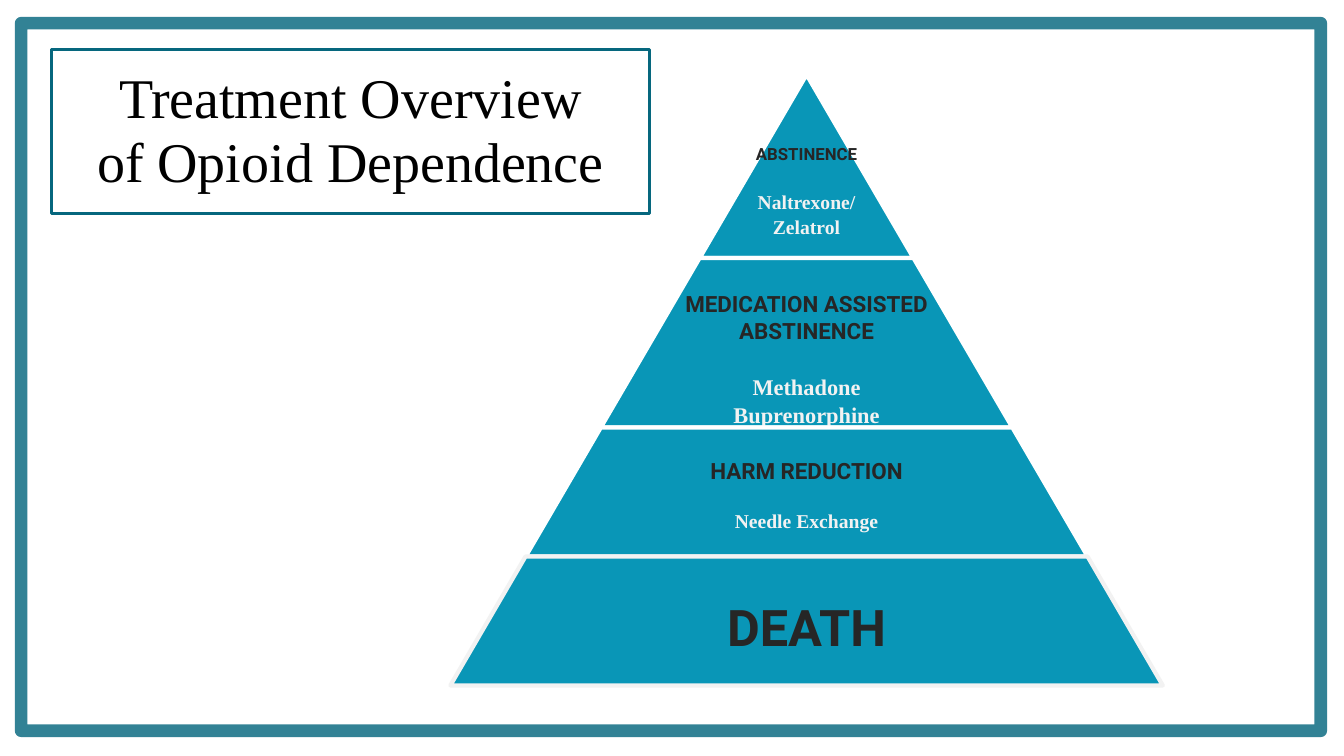
"""Build the opioid dependence treatment pyramid slide."""
from copy import deepcopy
from dataclasses import dataclass

from lxml.etree import SubElement
from pptx import Presentation
from pptx.dml.color import RGBColor
from pptx.enum.shapes import MSO_SHAPE
from pptx.enum.text import MSO_ANCHOR, MSO_AUTO_SIZE, PP_ALIGN
from pptx.oxml.ns import qn
from pptx.util import Inches, Pt

BLACK = RGBColor(0x00, 0x00, 0x00)
WHITE = RGBColor(0xFF, 0xFF, 0xFF)
PALE = RGBColor(0xF2, 0xF2, 0xF2)
DARK = RGBColor(0x26, 0x26, 0x26)
TEAL = RGBColor(0x06, 0x67, 0x7E)
BLUE = RGBColor(0x09, 0x96, 0xB7)

HEADING = {"name": "Roboto", "bold": True}
DETAIL = {"name": "Times New Roman", "bold": True}
CENTER_X, APEX_Y, SLOPE = 8.0, 0.74, 0.583


@dataclass
class Line:
    text: str
    size: float
    style: dict
    color: RGBColor
    before: float = 0


@dataclass
class Level:
    height: float
    text_share: float
    text_inset: float
    edge: RGBColor
    lines: list[Line]


LEVELS = [
    Level(1.82, 1, 0.69, WHITE, [
        Line("ABSTINENCE", 12, HEADING, DARK),
        Line("Naltrexone/", 14, DETAIL, PALE, 18.5),
        Line("Zelatrol", 14, DETAIL, PALE, 1)]),
    Level(1.68, 0.65, 0.32, WHITE, [
        Line("MEDICATION ASSISTED\nABSTINENCE", 16, HEADING, DARK),
        Line("Methadone", 16, DETAIL, PALE, 20.5),
        Line("Buprenorphine", 16, DETAIL, PALE, 1)]),
    Level(1.28, 0.65, 0.29, WHITE, [
        Line("HARM REDUCTION", 16, HEADING, DARK),
        Line("Needle Exchange", 14, DETAIL, PALE, 18)]),
    Level(1.28, 0.65, 0.39, PALE, [Line("DEATH", 36, HEADING, DARK)]),
]


def write_line(p, line: Line) -> None:
    p.text = line.text
    p.alignment = PP_ALIGN.CENTER
    if line.before:
        p.space_before = Pt(line.before)
    for r in p.runs:
        for key, value in {**line.style, "size": Pt(line.size)}.items():
            setattr(r.font, key, value)
        r.font.color.rgb = line.color
    for br in p._p.findall(qn("a:br")):
        br.append(deepcopy(p.runs[0]._r.rPr))


def outline(sp, color: RGBColor, width: float) -> None:
    sp.line.color.rgb = color
    sp.line.width = Pt(width)


def draw_level(s, level: Level, top: float) -> None:
    width = 2 * SLOPE * (top + level.height - APEX_Y)
    sp = s.shapes.add_shape(
        MSO_SHAPE.TRAPEZOID, Inches(CENTER_X - width / 2), Inches(top),
        Inches(width), Inches(level.height))
    sp.adjustments[0] = SLOPE
    sp.shadow.inherit = False
    sp.fill.solid()
    sp.fill.fore_color.rgb = BLUE
    outline(sp, level.edge, 3)

    width *= level.text_share
    tf = s.shapes.add_textbox(
        Inches(CENTER_X - width / 2), Inches(top),
        Inches(width), Inches(level.height)).text_frame
    frame = {"word_wrap": True, "vertical_anchor": MSO_ANCHOR.TOP,
             "margin_left": Inches(0.02), "margin_right": Inches(0.02),
             "margin_top": Inches(level.text_inset), "margin_bottom": 0}
    for key, value in frame.items():
        setattr(tf, key, value)
    for i, line in enumerate(level.lines):
        write_line(tf.add_paragraph() if i else tf.paragraphs[0], line)


def draw_title(s) -> None:
    sp = s.shapes.title
    box = {"left": 0.51, "top": 0.49, "width": 5.93, "height": 1.63}
    for key, value in box.items():
        setattr(sp, key, Inches(value))
    outline(sp, TEAL, 2.25)
    tf = sp.text_frame
    tf.auto_size = MSO_AUTO_SIZE.NONE
    tf.vertical_anchor = MSO_ANCHOR.MIDDLE
    p = tf.paragraphs[0]
    write_line(p, Line("Treatment Overview\nof Opioid Dependence", 40,
                       {"name": "Times New Roman"}, BLACK))
    p.line_spacing = 0.95


def draw_border(s) -> None:
    sp = s.shapes.add_shape(MSO_SHAPE.RECTANGLE, Inches(0.21), Inches(0.23),
                            Inches(12.89), Inches(7.02))
    sp.shadow.inherit = False
    sp.fill.background()
    outline(sp, TEAL, 9)
    color = sp.line._ln.find(".//" + qn("a:srgbClr"))
    SubElement(color, qn("a:alpha"), val="81000")


def main() -> None:
    prs = Presentation()
    prs.slide_width, prs.slide_height = Inches(13.33), Inches(7.5)
    s = prs.slides.add_slide(prs.slide_layouts[5])
    top = APEX_Y
    for level in LEVELS:
        draw_level(s, level, top)
        top += level.height
    draw_title(s)
    draw_border(s)
    prs.save("out.pptx")


if __name__ == "__main__":
    main()
